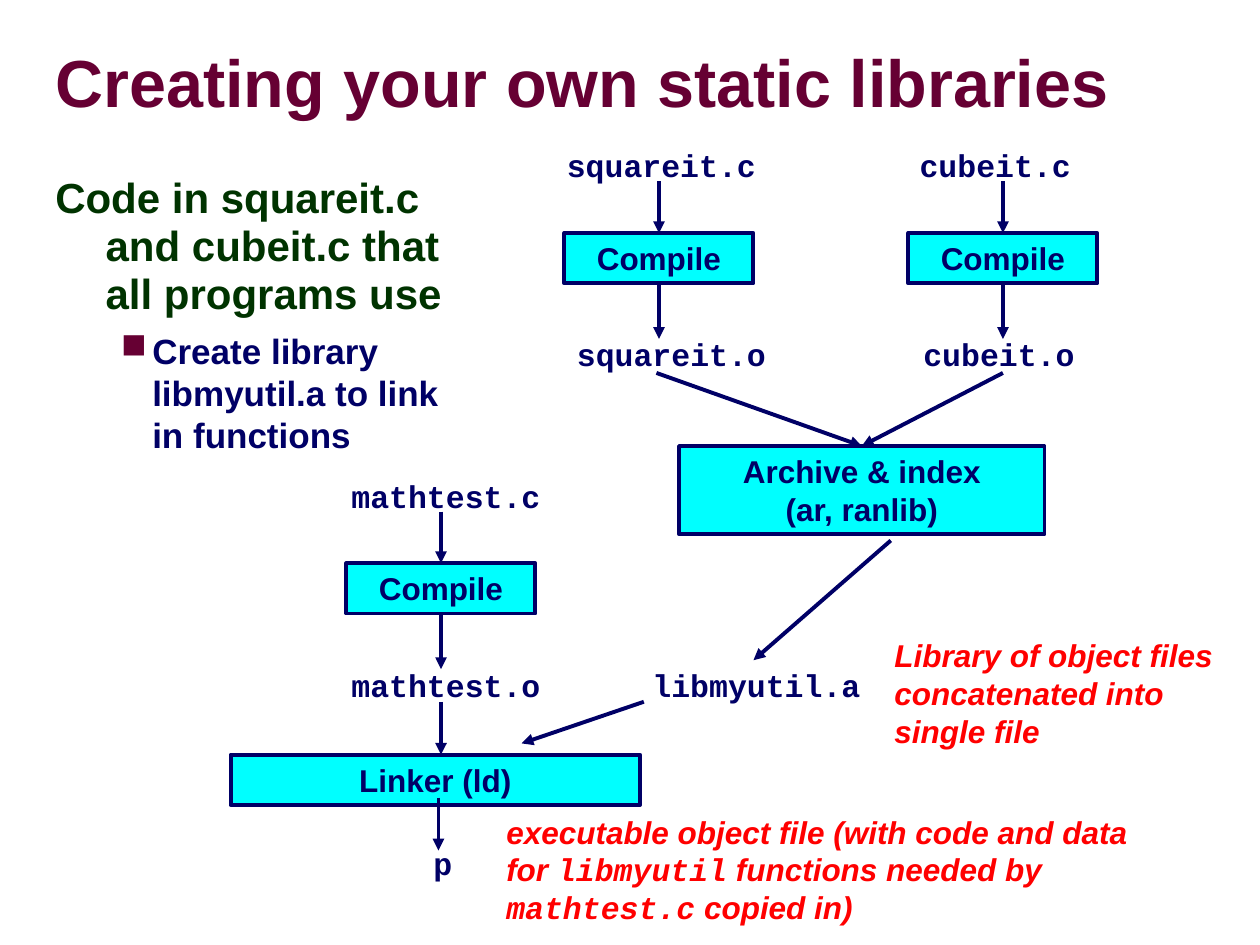
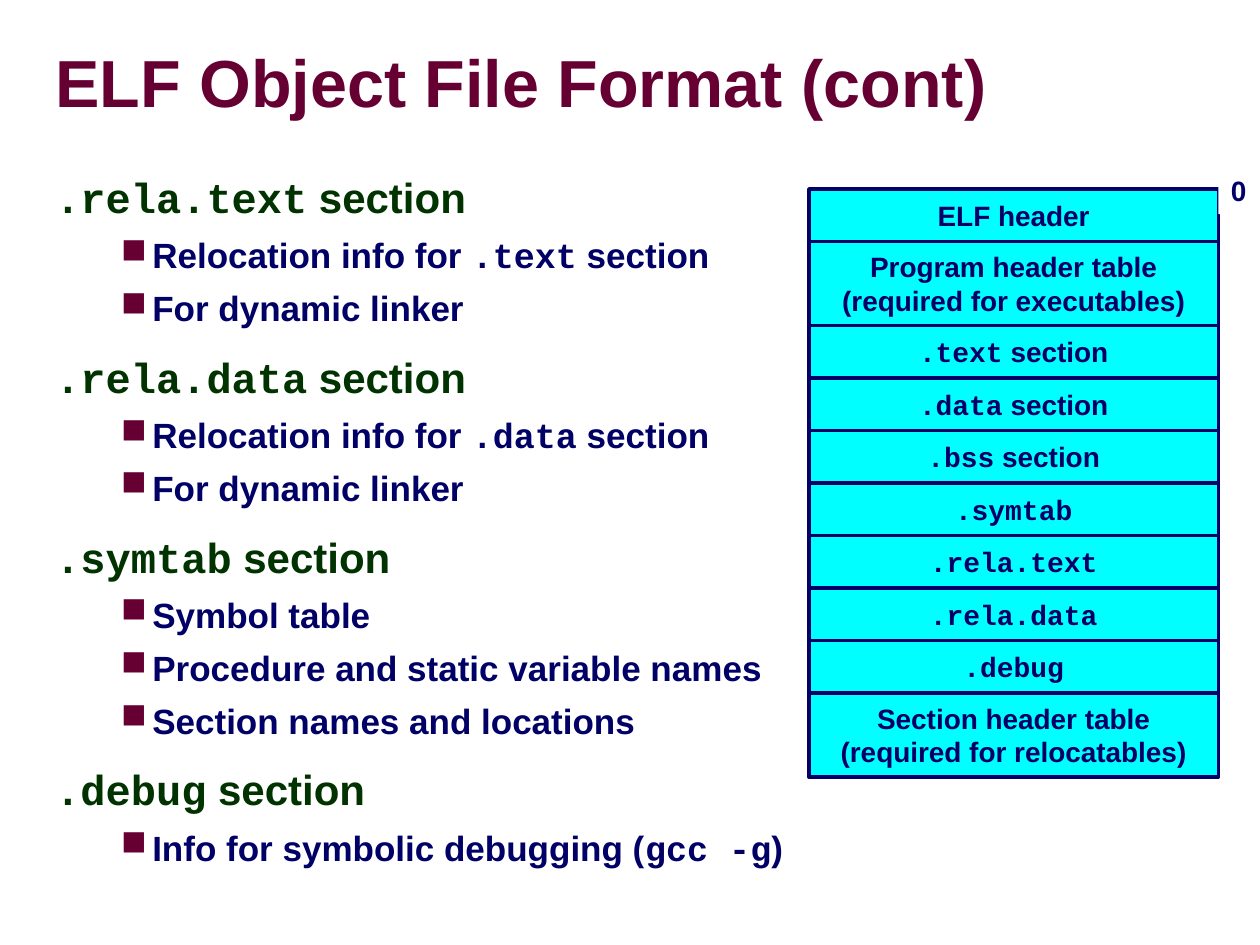
"""Build two slides on static libraries and the ELF object file format."""
import lxml.etree
import pptx
import pptx.dml.color
import pptx.enum.shapes
import pptx.enum.text
import pptx.oxml.ns
import pptx.util

Inches = pptx.util.Inches
Pt = pptx.util.Pt
rgb = pptx.dml.color.RGBColor.from_string
qn = pptx.oxml.ns.qn

NAVY, MAROON, GREEN = "000066", "660033", "003300"
CYAN, RED, WHITE = "00FFFF", "FF0000", "FFFFFF"
BODY_FONT, CODE_FONT = "Arial", "Courier New"


def write(paragraph, marked_text, size, color=NAVY, italic=False):
    """Fill a paragraph, setting the parts between backticks in the code font."""
    for index, part in enumerate(marked_text.split("`")):
        if part:
            run = paragraph.add_run()
            run.text = part
            run.font.name = CODE_FONT if index % 2 else BODY_FONT
            run.font.size = Pt(size)
            run.font.bold = True
            run.font.italic = italic
            run.font.color.rgb = rgb(color)


def add_box(slide, left, top, width, height, lines, size, outline):
    """Add a cyan box with centred lines of text."""
    box = slide.shapes.add_shape(
        pptx.enum.shapes.MSO_SHAPE.RECTANGLE,
        Inches(left), Inches(top), Inches(width), Inches(height))
    box.shadow.inherit = False
    box.fill.solid()
    box.fill.fore_color.rgb = rgb(CYAN)
    box.line.color.rgb = rgb(NAVY)
    box.line.width = Pt(outline)
    frame = box.text_frame
    frame.word_wrap = False
    frame.vertical_anchor = pptx.enum.text.MSO_ANCHOR.MIDDLE
    for index, line in enumerate(lines):
        paragraph = frame.add_paragraph() if index else frame.paragraphs[0]
        paragraph.alignment = pptx.enum.text.PP_ALIGN.CENTER
        write(paragraph, line, size)
    return box


deck = pptx.Presentation()
deck.slide_width = Inches(10)
deck.slide_height = Inches(7.5)

outlines = [
    ("Creating your own static libraries", 3.52, [
        ("Code in squareit.c and cubeit.c that all programs use",
         ["Create library libmyutil.a to link in functions"]),
    ]),
    ("ELF Object File Format (cont)", 6.18, [
        ("`.rela.text` section",
         ["Relocation info for `.text` section", "For dynamic linker"]),
        ("`.rela.data` section",
         ["Relocation info for `.data` section", "For dynamic linker"]),
        ("`.symtab` section",
         ["Symbol table", "Procedure and static variable names",
          "Section names and locations"]),
        ("`.debug` section",
         ["Info for symbolic debugging (`gcc -g`)"]),
    ]),
]

for heading, body_width, topics in outlines:
    slide = deck.slides.add_slide(deck.slide_layouts[6])
    title = slide.shapes.add_textbox(
        Inches(0.44), Inches(0.27), Inches(9.51), Inches(0.83)).text_frame
    title.word_wrap = True
    title.margin_left = title.margin_right = 0
    title.margin_top = title.margin_bottom = 0
    title.vertical_anchor = pptx.enum.text.MSO_ANCHOR.MIDDLE
    title.paragraphs[0].line_spacing = 0.87
    write(title.paragraphs[0], heading, 38, MAROON)

    body = slide.shapes.add_textbox(
        Inches(0.32), Inches(1.34), Inches(body_width), Inches(5.69)).text_frame
    body.word_wrap = True
    for number, (topic, points) in enumerate(topics):
        paragraph = body.add_paragraph() if number else body.paragraphs[0]
        paragraph.line_spacing = 0.95
        paragraph.space_before = Pt(15)
        layout = paragraph._p.get_or_add_pPr()
        layout.set("marL", str(Inches(0.42)))
        layout.set("indent", str(Inches(-0.4)))
        write(paragraph, topic, 24, GREEN)
        for point in points:
            paragraph = body.add_paragraph()
            paragraph.level = 1
            paragraph.space_before = Pt(6.2)
            layout = paragraph._p.get_or_add_pPr()
            layout.set("marL", str(Inches(0.79)))
            layout.set("indent", str(Inches(-0.25)))
            bullet_color = lxml.etree.SubElement(layout, qn("a:buClr"))
            lxml.etree.SubElement(bullet_color, qn("a:srgbClr"), val=MAROON)
            lxml.etree.SubElement(layout, qn("a:buChar"), char="■")
            write(paragraph, point, 20)

build_slide, elf_slide = deck.slides

squareit, cubeit, mathtest = [
    add_box(build_slide, left, top, 1.5, 0.4, ["Compile"], 18, 2.25)
    for left, top in [(4.48, 1.85), (7.21, 1.85), (2.75, 4.47)]]
archive = add_box(build_slide, 5.39, 3.54, 2.9, 0.7,
                  ["Archive & index", "(ar, ranlib)"], 18, 2.25)
add_box(build_slide, 1.83, 5.99, 3.25, 0.4, ["Linker (ld)"], 18, 2.25)

file_names = [
    ("squareit.c", 4.4, 1.11, 1.71), ("squareit.o", 4.48, 2.61, 1.71),
    ("cubeit.c", 7.2, 1.11, 1.4), ("cubeit.o", 7.23, 2.61, 1.4),
    ("mathtest.c", 2.69, 3.74, 1.71), ("mathtest.o", 2.69, 5.24, 1.71),
    ("libmyutil.a", 5.08, 5.24, 1.86), ("p", 3.34, 6.65, 0.35),
]
for name, left, top, width in file_names:
    label = build_slide.shapes.add_textbox(
        Inches(left), Inches(top), Inches(width), Inches(0.41)).text_frame
    label.word_wrap = False
    write(label.paragraphs[0], f"`{name}`", 18)

remarks = [
    ("Library of object files concatenated into single file", 7, 5, 2.95),
    ("executable object file (with code and data for `libmyutil` functions "
     "needed by `mathtest.c` copied in)", 3.92, 6.4, 5.33),
]
for remark, left, top, width in remarks:
    note = build_slide.shapes.add_textbox(
        Inches(left), Inches(top), Inches(width), Inches(1)).text_frame
    note.word_wrap = True
    write(note.paragraphs[0], remark, 18, RED, italic=True)

flows = [
    (5.21, 2.96, 6.84, 3.54, None, archive),
    (7.96, 2.96, 6.84, 3.54, None, archive),
    (7.07, 4.29, 5.98, 5.24, None, None),
    (3.5, 5.57, 3.5, 5.99, None, None),
    (5.11, 5.57, 4.14, 5.9, None, None),
    (3.48, 6.33, 3.48, 6.75, None, None),
]
for compiler, x, top in [(squareit, 5.23, 1.85), (cubeit, 7.96, 1.85),
                         (mathtest, 3.5, 4.47)]:
    flows.append((x, top - 0.41, x, top, None, compiler))
    flows.append((x, top + 0.4, x, top + 0.84, compiler, None))

for x1, y1, x2, y2, source, target in flows:
    arrow = build_slide.shapes.add_connector(
        pptx.enum.shapes.MSO_CONNECTOR.STRAIGHT,
        Inches(x1), Inches(y1), Inches(x2), Inches(y2))
    if source:
        arrow.begin_connect(source, 2)
    if target:
        arrow.end_connect(target, 0)
    arrow.line.color.rgb = rgb(NAVY)
    arrow.line.width = Pt(2.25)
    lxml.etree.SubElement(arrow.line._get_or_add_ln(), qn("a:tailEnd"), type="triangle")
    lxml.etree.SubElement(arrow._element.spPr, qn("a:effectLst"))

sections = [
    ["ELF header"],
    ["Program header table", "(required for executables)"],
    ["`.text` section"],
    ["`.data` section"],
    ["`.bss` section"],
    ["`.symtab`"],
    ["`.rela.text`"],
    ["`.rela.data`"],
    ["`.debug`"],
    ["Section header table", "(required for relocatables)"],
]
section_top = 1.5
for lines in sections:
    section_height = (2 + 3 * len(lines)) / 12
    add_box(elf_slide, 6.42, section_top, 3.25, section_height, lines, 16, 2)
    section_top += section_height

offset = elf_slide.shapes.add_textbox(
    Inches(9.67), Inches(1.33), Inches(0.32), Inches(0.37))
offset.fill.solid()
offset.fill.fore_color.rgb = rgb(WHITE)
offset.text_frame.word_wrap = False
write(offset.text_frame.paragraphs[0], "0", 16)

deck.save("out.pptx")
